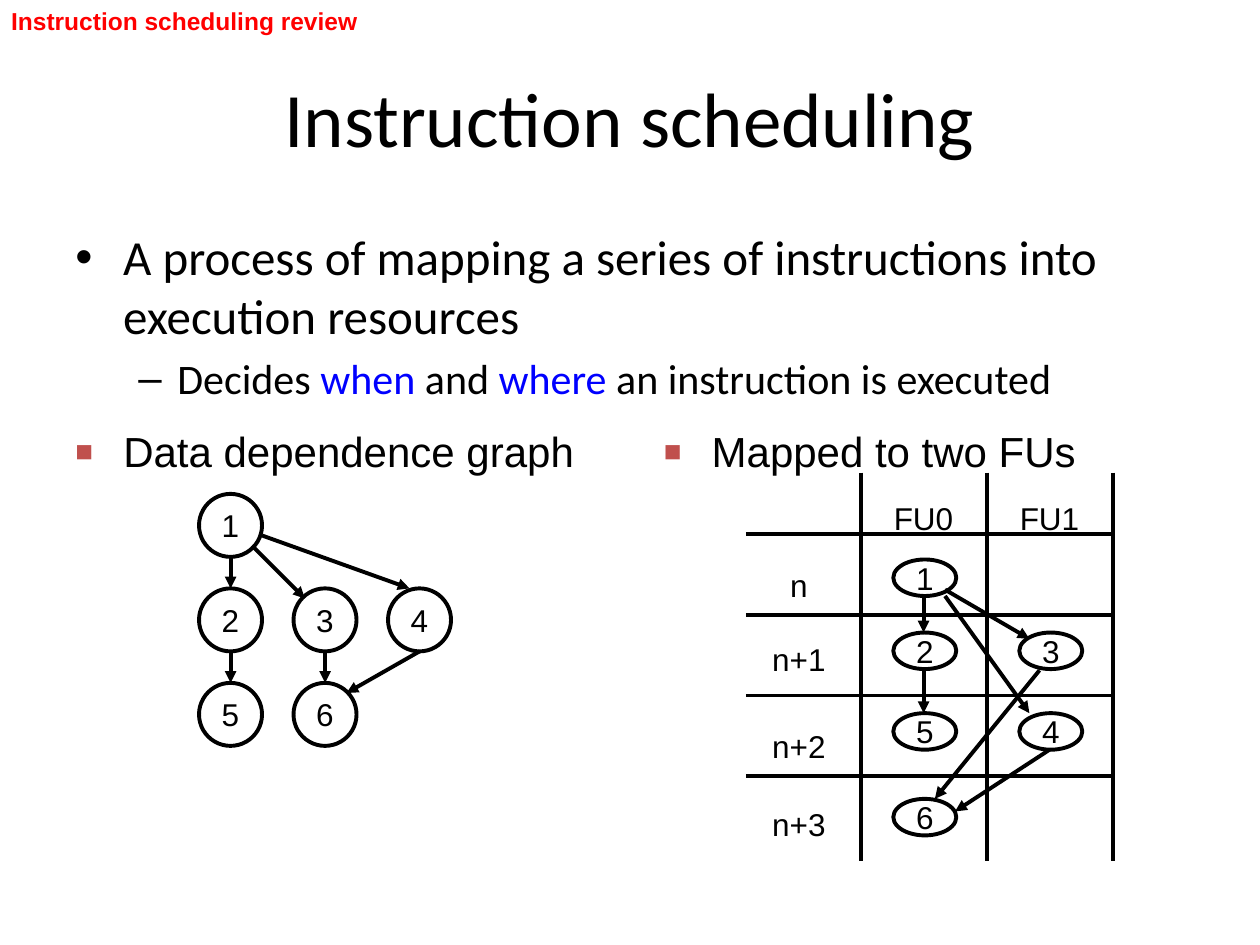
from lxml import etree
from pptx import Presentation
from pptx.dml.color import RGBColor
from pptx.enum import shapes, text
from pptx.oxml import ns
from pptx.util import Inches, Pt

BLACK, BLUE, RED, BRICK = "000000", "0000FF", "FF0000", "C0504D"

PROCESS = [("A process of mapping a series of instructions into execution resources", BLACK)]
DECISION = [("Decides ", BLACK), ("when", BLUE), (" and ", BLACK), ("where", BLUE),
            (" an instruction is executed", BLACK)]
# heading, left, width
HEADINGS = [("Data dependence graph", 0.5, 4.42), ("Mapped to two FUs", 5.17, 4.33)]

# instruction: (column, row)
GRAPH_NODES = {"1": (0, 0), "2": (0, 1), "3": (1, 1), "4": (2, 1), "5": (0, 2), "6": (1, 2)}
GRAPH_LEFT, GRAPH_TOP, GRAPH_STEP, NODE = 1.58, 3.92, 0.75, 0.5
GRAPH_ARROWS = [
    (1.83, 4.42, 1.83, 4.67), (2, 4.33, 2.42, 4.75), (2.08, 4.25, 3.25, 4.67),
    (1.83, 5.17, 1.83, 5.42), (2.58, 5.17, 2.58, 5.42), (3.33, 5.17, 2.75, 5.5),
]

UNITS = ["FU0", "FU1"]
# cycle, label top, node top, instruction on each unit
CYCLES = [
    ("n", 4.44, 4.44, ["1"]),
    ("n+1", 5.03, 5.02, ["2", "3"]),
    ("n+2", 5.72, 5.66, ["5", "4"]),
    ("n+3", 6.34, 6.34, ["6"]),
]
TABLE_LEFT, TABLE_TOP, TABLE_BOTTOM = 5.92, 3.75, 6.83
UNIT_LEFT, UNIT_WIDTH = 6.83, 1
RULE_TOP, RULE_STEP = 4.24, 0.64
SLOT_HEIGHT, LABEL_WIDTH, LABEL_HEIGHT = 0.29, 0.7, 0.4
SCHEDULE_ARROWS = [
    (7.33, 4.73, 7.33, 5.02), (7.5, 4.68, 8.17, 5.07), (7.5, 4.73, 8.17, 5.66),
    (7.33, 5.32, 7.33, 5.66), (8.33, 5.95, 7.58, 6.44), (8.25, 5.32, 7.42, 6.34),
]


def rgb(color):
    return RGBColor.from_string(color)


def add_xml(parent, tag, **attributes):
    return etree.SubElement(parent, ns.qn(tag), attributes)


def write(paragraph, runs, size=18, font="Arial", color=BLACK, bold=False,
          align=text.PP_ALIGN.CENTER):
    """Fill a paragraph with a string, or with (string, color) runs."""
    paragraph.alignment = align
    for words, run_color in [(runs, color)] if isinstance(runs, str) else runs:
        run = paragraph.add_run()
        run.text = words
        run.font.size, run.font.name, run.font.bold = Pt(size), font, bold
        run.font.color.rgb = rgb(run_color)


def write_bullet(paragraph, runs, char, indent, hang, color=None, percent=None, **style):
    write(paragraph, runs, align=text.PP_ALIGN.LEFT, **style)
    props = paragraph._p.get_or_add_pPr()
    props.set("marL", str(Inches(indent)))
    props.set("indent", str(-Inches(hang)))
    add_xml(add_xml(props, "a:spcBef"), "a:spcPct", val="20000")
    if color:
        add_xml(add_xml(props, "a:buClr"), "a:srgbClr", val=color)
    if percent:
        add_xml(props, "a:buSzPct", val=str(percent * 1000))
    add_xml(props, "a:buFont", typeface="Arial")
    add_xml(props, "a:buChar", char=char)


def add_box(slide, left, top, width, height, wrap=False, anchor=text.MSO_ANCHOR.TOP):
    """Add a text frame; one that does not wrap grows with its text."""
    box = slide.shapes.add_textbox(*map(Inches, (left, top, width, height)))
    frame = box.text_frame
    frame.word_wrap = wrap
    frame.vertical_anchor = anchor
    if not wrap:
        frame.auto_size = text.MSO_AUTO_SIZE.SHAPE_TO_FIT_TEXT
    return frame


def add_label(slide, label, center, top):
    frame = add_box(slide, center - LABEL_WIDTH / 2, top, LABEL_WIDTH, LABEL_HEIGHT)
    write(frame.paragraphs[0], label)


def add_node(slide, label, left, top, height):
    node = slide.shapes.add_shape(shapes.MSO_SHAPE.OVAL,
                                  *map(Inches, (left, top, NODE, height)))
    node.shadow.inherit = False
    node.fill.background()
    node.line.color.rgb, node.line.width = rgb(BLACK), Pt(2.25)
    node.text_frame.word_wrap = False
    node.text_frame.vertical_anchor = text.MSO_ANCHOR.MIDDLE
    write(node.text_frame.paragraphs[0], label)


def add_line(slide, ends, arrow=False):
    line = slide.shapes.add_connector(shapes.MSO_CONNECTOR.STRAIGHT, *map(Inches, ends))
    line.line.color.rgb, line.line.width = rgb(BLACK), Pt(2.25)
    if arrow:
        add_xml(line.line._get_or_add_ln(), "a:tailEnd", type="triangle")
    add_xml(line._element.spPr, "a:effectLst")


def add_texts(slide):
    title = add_box(slide, 0.5, 0.3, 9, 1.25, wrap=True, anchor=text.MSO_ANCHOR.MIDDLE)
    write(title.paragraphs[0], "Instruction scheduling", size=44, font="Calibri")
    body = add_box(slide, 0.5, 1.75, 9, 1.55, wrap=True)
    write_bullet(body.paragraphs[0], PROCESS, "•", 0.38, 0.38, size=28, font="Calibri")
    write_bullet(body.add_paragraph(), DECISION, "–", 0.81, 0.31, size=24, font="Calibri")
    for heading, left, width in HEADINGS:
        frame = add_box(slide, left, 3.33, width, 0.75, wrap=True)
        write_bullet(frame.paragraphs[0], heading, "■", 0.38, 0.38,
                     color=BRICK, percent=70, size=24)
    section = add_box(slide, -0.01, 0, 2.96, 0.34)
    write(section.paragraphs[0], "Instruction scheduling review", size=14, color=RED,
          bold=True, align=text.PP_ALIGN.LEFT)


def add_graph(slide):
    for label, (column, row) in GRAPH_NODES.items():
        add_node(slide, label, GRAPH_LEFT + column * GRAPH_STEP,
                 GRAPH_TOP + row * GRAPH_STEP, NODE)
    for ends in GRAPH_ARROWS:
        add_line(slide, ends, arrow=True)


def add_schedule(slide):
    right = UNIT_LEFT + len(UNITS) * UNIT_WIDTH
    for column in range(len(UNITS) + 1):
        x = UNIT_LEFT + column * UNIT_WIDTH
        add_line(slide, (x, TABLE_TOP, x, TABLE_BOTTOM))
    for row in range(len(CYCLES)):
        y = RULE_TOP + row * RULE_STEP
        add_line(slide, (TABLE_LEFT, y, right, y))
    centers = [UNIT_LEFT + (column + 0.5) * UNIT_WIDTH for column in range(len(UNITS))]
    for unit, center in zip(UNITS, centers):
        add_label(slide, unit, center, 3.91)
    for cycle, label_top, node_top, instructions in CYCLES:
        add_label(slide, cycle, 6.34, label_top)
        for instruction, center in zip(instructions, centers):
            add_node(slide, instruction, center + 0.01 - NODE / 2, node_top, SLOT_HEIGHT)
    for ends in SCHEDULE_ARROWS:
        add_line(slide, ends, arrow=True)


def main():
    deck = Presentation()
    deck.slide_width, deck.slide_height = Inches(10), Inches(7.5)
    slide = deck.slides.add_slide(deck.slide_layouts[6])
    add_texts(slide)
    add_graph(slide)
    add_schedule(slide)
    deck.save("out.pptx")


if __name__ == "__main__":
    main()
